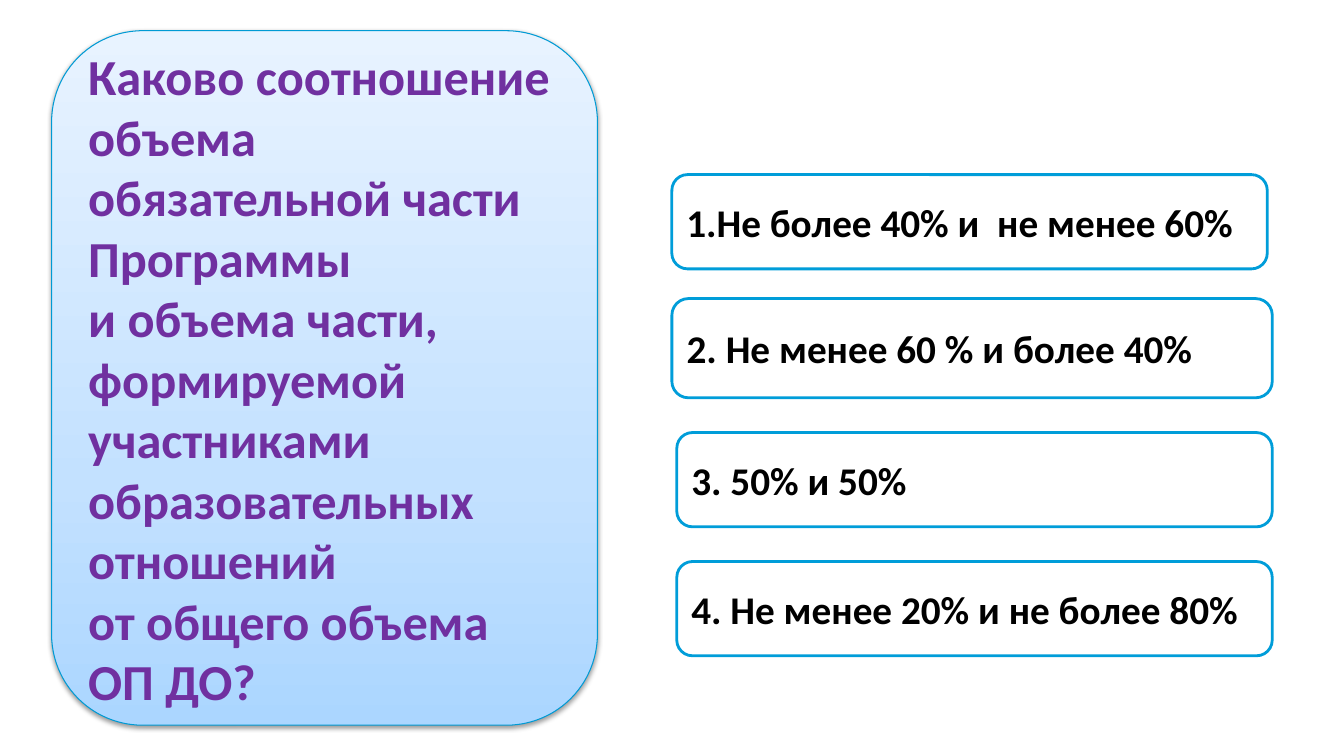
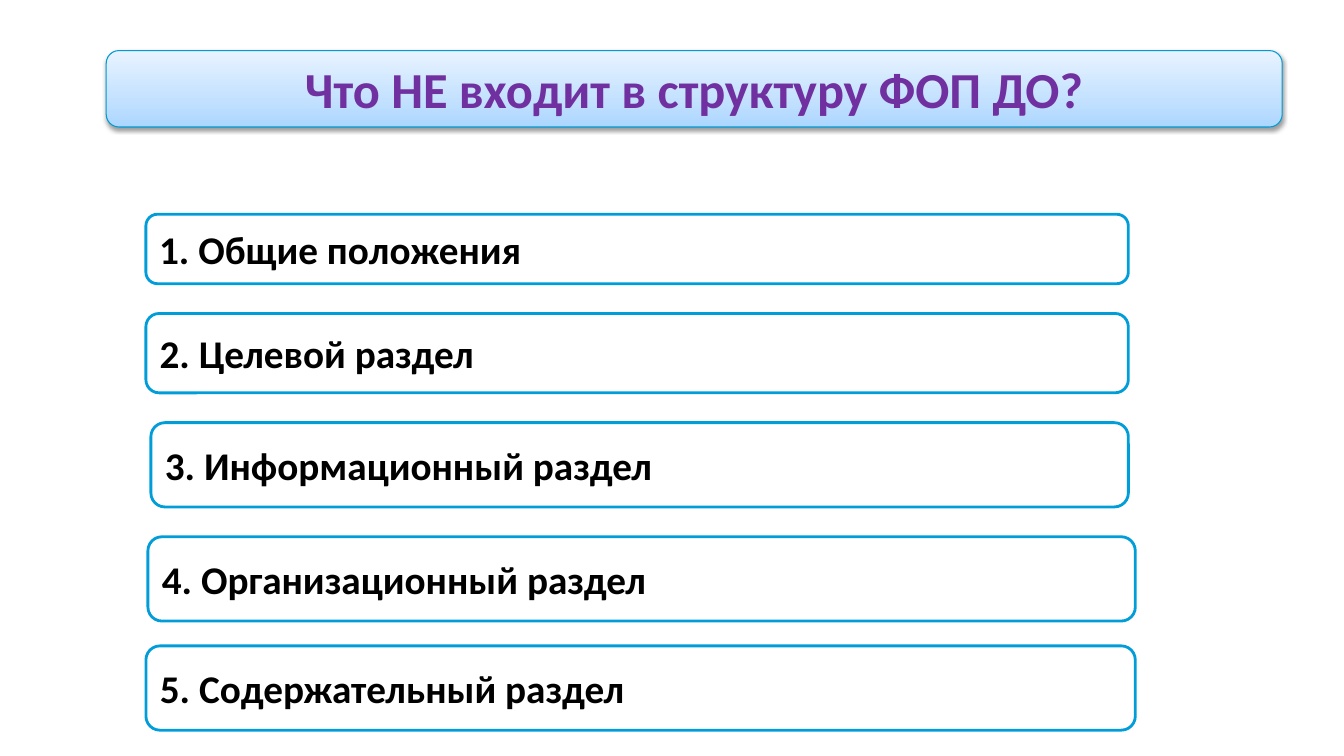
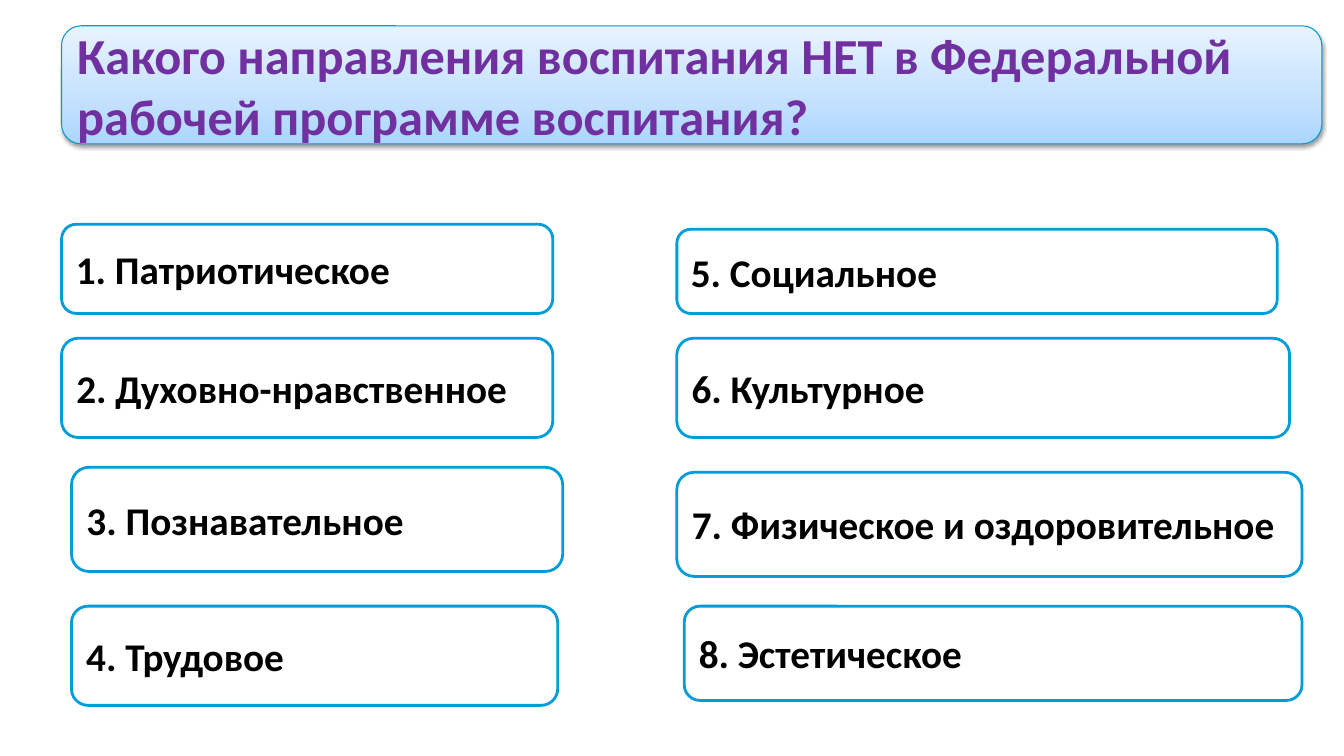
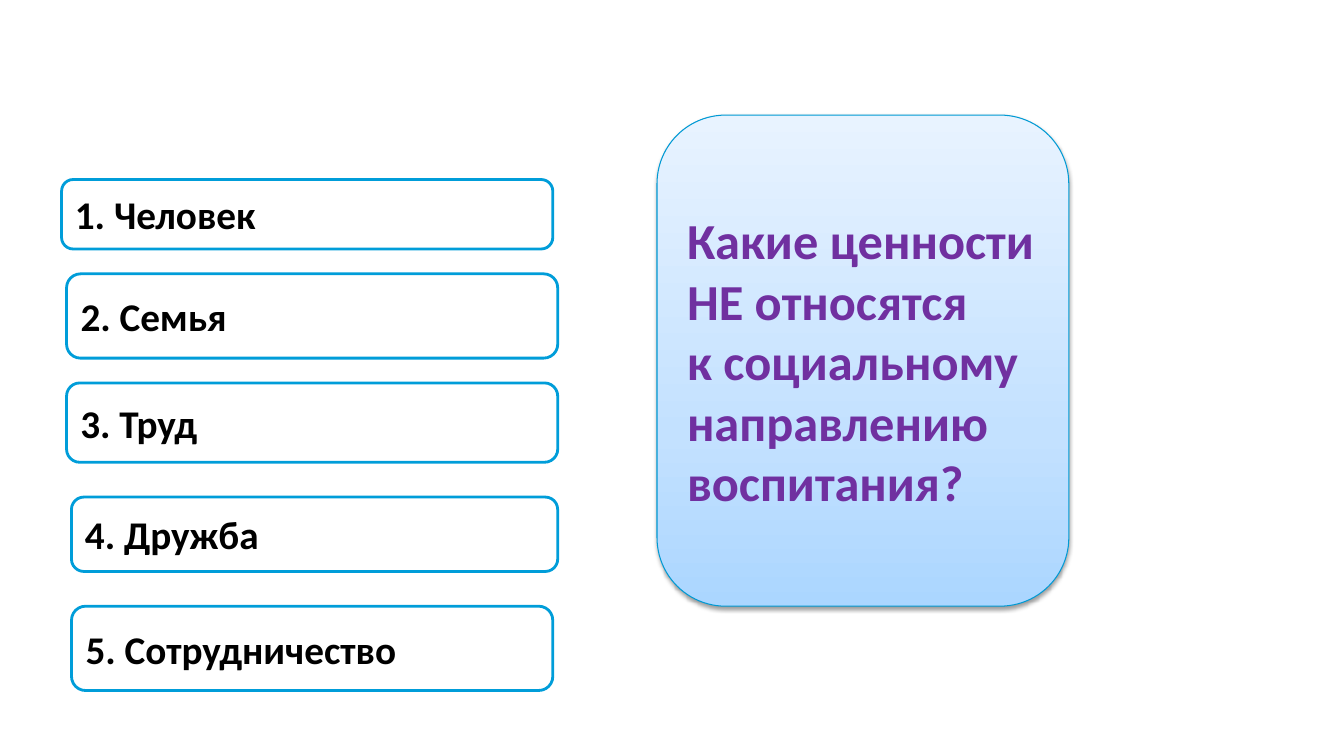
from pptx import Presentation, oxml
from pptx import util as u
from pptx.dml.color import RGBColor
from pptx.enum import shapes, text
from pptx.oxml.ns import nsdecls

# Boxes are (left, top, width, height) in cells of the grid.
CELL = u.Mm(1.25)
ORIGIN_LEFT, ORIGIN_TOP = u.Inches(0.02), u.Inches(0.01)

WHITE = RGBColor(0xFF, 0xFF, 0xFF)
BLACK = RGBColor(0, 0, 0)
PURPLE = RGBColor(0x70, 0x30, 0xA0)
OPTION_BLUE = RGBColor(0x00, 0x9D, 0xD9)
QUESTION_BLUE = RGBColor(0x00, 0x9A, 0xD4)
GRADIENT = [
    (0, RGBColor(0xAB, 0xD6, 0xFF)),
    (35, RGBColor(0xC3, 0xE1, 0xFF)),
    (100, RGBColor(0xE8, 0xF3, 0xFF)),
]

QUESTION_FONT = {"name": "Calibri", "size": u.Pt(36), "bold": True}
OPTION_FONT = {"name": "Calibri", "size": u.Pt(28), "bold": True}
LEFT, CENTER = text.PP_ALIGN.LEFT, text.PP_ALIGN.CENTER

QUIZ = [
    {
        "question": [
            "Каково соотношение объема обязательной части Программы",
            "и объема части, формируемой участниками образовательных отношений",
            "от общего объема ОП ДО?",
        ],
        "box": (10, 6, 110, 140),
        "align": LEFT,
        "auto_numbered": 1,
        "options": [
            ("Не более 40% и  не менее 60%", (135, 35, 120, 19)),
            ("2. Не менее 60 % и более 40%", (135, 60, 121, 20)),
            ("3. 50% и 50%", (136, 87, 120, 19)),
            ("4. Не менее 20% и не более 80%", (136, 113, 120, 19)),
        ],
    },
    {
        "question": ["Что НЕ входит в структуру ФОП ДО?"],
        "box": (21, 10, 237, 15.4),
        "align": CENTER,
        "options": [
            ("1. Общие положения", (29, 43, 198, 14)),
            ("2. Целевой раздел", (29, 63, 198, 16)),
            ("3. Информационный раздел", (30, 85, 197, 17)),
            ("4. Организационный раздел", (29.4, 108, 199, 17)),
            ("5. Содержательный раздел", (29, 130, 199.4, 17)),
        ],
    },
    {
        "question": ["Какого направления воспитания НЕТ в Федеральной рабочей программе воспитания?"],
        "box": (12, 5, 254, 23.8),
        "align": LEFT,
        "options": [
            ("1. Патриотическое", (12, 45, 99, 18)),
            ("2. Духовно-нравственное", (12, 68, 99, 20)),
            ("3. Познавательное", (14, 94, 99, 21)),
            ("4. Трудовое", (14, 122, 98, 20)),
            ("5. Социальное", (136, 46, 121, 17)),
            ("6. Культурное", (136, 68, 123.5, 20)),
            ("7. Физическое и оздоровительное", (136, 95, 126, 21)),
            ("8. Эстетическое", (137.5, 122, 124.5, 19)),
        ],
    },
    {
        "question": ["Какие ценности", "НЕ относятся", "к социальному направлению воспитания?"],
        "box": (132, 23, 83, 99),
        "align": LEFT,
        "options": [
            ("1. Человек", (12, 36, 99, 14)),
            ("2. Семья", (13, 55, 99, 17)),
            ("3. Труд", (13, 77, 99, 16)),
            ("4. Дружба", (14, 100, 98, 15)),
            ("5. Сотрудничество", (14, 122, 97, 17)),
        ],
    },
]


def set_attributes(target, values):
    for name, value in values.items():
        setattr(target, name, value)


def append_drawing(parent, tag, attributes="", content=""):
    parent.append(oxml.parse_xml(f'<a:{tag} {nsdecls("a")} {attributes}>{content}</a:{tag}>'))


def add_panel(slide, box, line_color, line_points):
    left, top, width, height = (round(cells * CELL) for cells in box)
    panel = slide.shapes.add_shape(
        shapes.MSO_SHAPE.FLOWCHART_ALTERNATE_PROCESS,
        left + ORIGIN_LEFT, top + ORIGIN_TOP, width, height)
    panel.line.color.rgb = line_color
    panel.line.width = u.Pt(line_points)
    panel.shadow.inherit = False
    return panel


def write_text(shape, lines, font, color, align):
    frame = shape.text_frame
    frame.text = "\n".join(lines)
    set_attributes(frame, {"word_wrap": True, "vertical_anchor": text.MSO_ANCHOR.MIDDLE})
    for paragraph in frame.paragraphs:
        paragraph.alignment = align
        for run in paragraph.runs:
            set_attributes(run.font, font)
            run.font.color.rgb = color


def add_question(slide, lines, box, align):
    """Add a panel with a three-stop gradient and a soft shadow below it."""
    panel = add_panel(slide, box, QUESTION_BLUE, 0.75)
    panel.fill.gradient()
    panel.fill.gradient_angle = 90
    stops = panel._element.spPr.find(".//{*}gsLst")
    stops.clear()
    for share, color in GRADIENT:
        append_drawing(stops, "gs", f'pos="{share * 1000}"', f'<a:srgbClr val="{color}"/>')
    direction = panel._element.spPr.find(".//{*}lin")
    direction.set("ang", "16200000")
    direction.set("scaled", "0")
    append_drawing(panel._element.spPr.find("{*}effectLst"), "outerShdw",
                   'blurRad="40000" dist="20000" dir="5400000" rotWithShape="0"',
                   '<a:srgbClr val="000000"><a:alpha val="38000"/></a:srgbClr>')
    write_text(panel, lines, QUESTION_FONT, PURPLE, align)


def add_option(slide, label, box, auto_numbered):
    panel = add_panel(slide, box, OPTION_BLUE, 2)
    panel.fill.solid()
    panel.fill.fore_color.rgb = WHITE
    write_text(panel, [label], OPTION_FONT, BLACK, LEFT)
    if auto_numbered:
        properties = panel.text_frame.paragraphs[0]._p.get_or_add_pPr()
        properties.set("marL", "0")
        properties.set("indent", str(-u.Inches(0.5)))
        append_drawing(properties, "buAutoNum", 'type="arabicPeriod"')


def main():
    presentation = Presentation()
    presentation.slide_width, presentation.slide_height = u.Inches(13.33), u.Inches(7.5)
    blank = presentation.slide_layouts[6]
    for page in QUIZ:
        slide = presentation.slides.add_slide(blank)
        add_question(slide, page["question"], page["box"], page["align"])
        for number, (label, box) in enumerate(page["options"], 1):
            add_option(slide, label, box, number == page.get("auto_numbered"))
    presentation.save("out.pptx")


if __name__ == "__main__":
    main()
